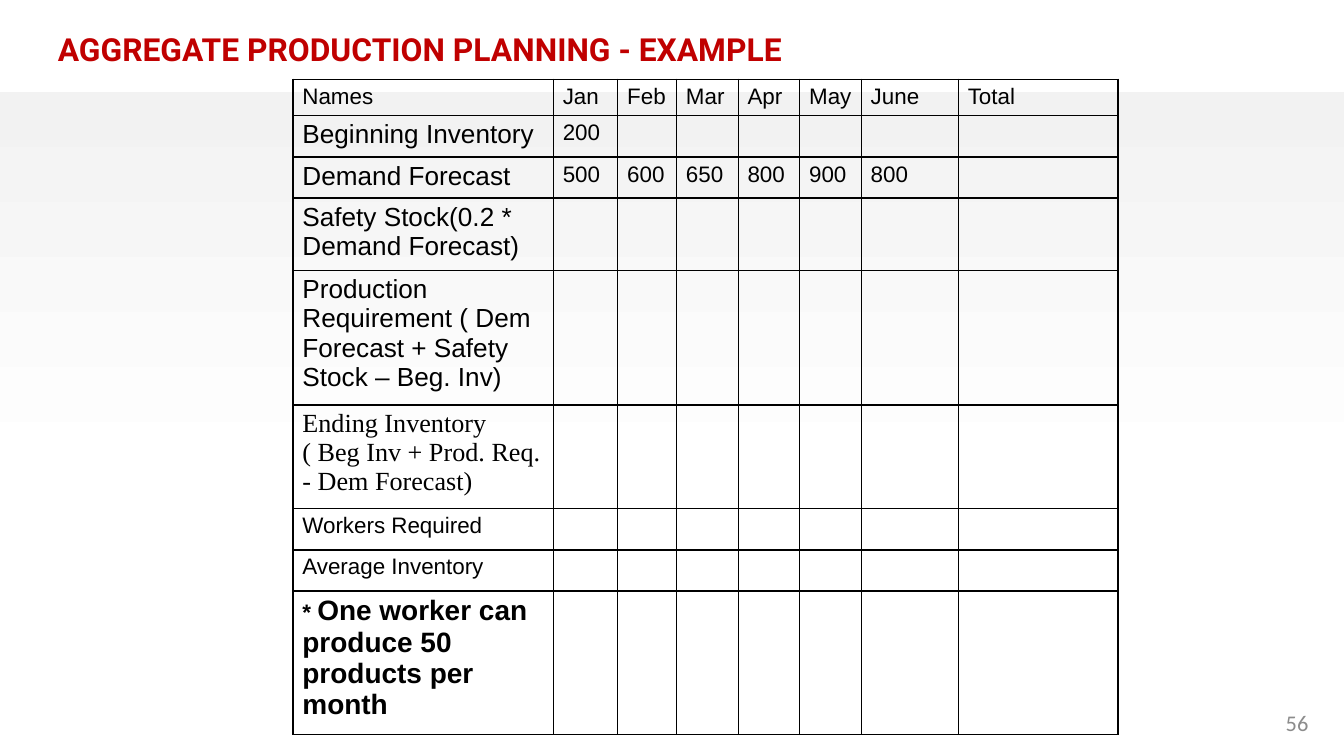
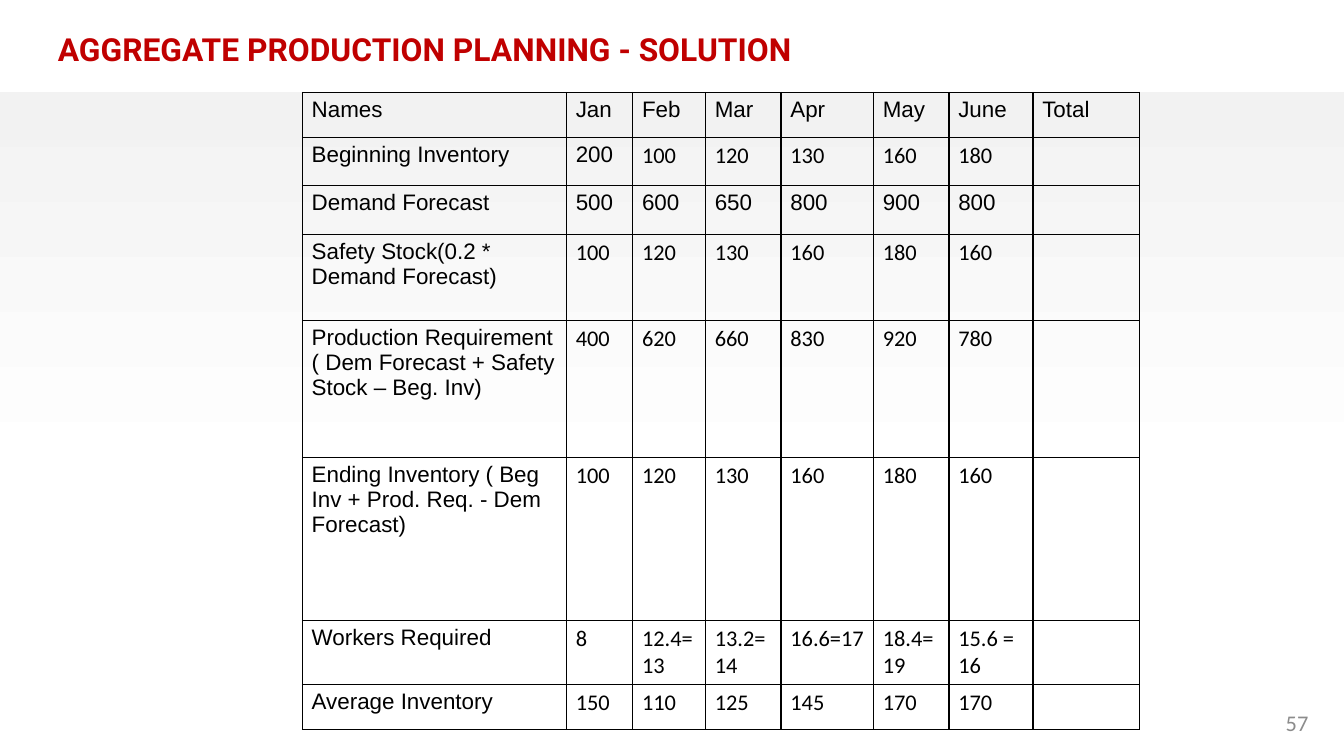
import pptx
import pptx.util
from lxml import etree
from pptx.dml.color import RGBColor
from pptx.enum.shapes import MSO_SHAPE
from pptx.enum.text import MSO_ANCHOR, MSO_AUTO_SIZE, PP_ALIGN
from pptx.oxml.ns import qn

Pt = pptx.util.Pt

COLORS = {
    "title": "C00000",
    "text": "000000",
    "number": "8C8C8C",
    "border": "000000",
    "band_top": "F2F2F2",
    "band_bottom": "FFFFFF",
}
SLIDE_SIZE = (720, 405)
BAND_BOX = (0, 49.5, 720, 355.5)
NUMBER_BOX = (540, 376.5, 168, 21.5)
TITLE_ONLY_LAYOUT = 5
CELL_MARGINS = {"margin_left": 5, "margin_right": 5, "margin_top": 2.5, "margin_bottom": 2.5}
BORDER_WIDTH = 0.75

HEADINGS = ["Names", "Jan", "Feb", "Mar", "Apr", "May", "June", "Total"]
DEMAND = ["500", "600", "650", "800", "900", "800"]
BEGINNING_LABEL = "Beginning Inventory"
DEMAND_LABEL = "Demand Forecast"
SAFETY_LABEL = "Safety Stock(0.2 * Demand Forecast)"
PRODUCTION_LABEL = "Production Requirement ( Dem Forecast + Safety Stock – Beg. Inv)"
ENDING_LABEL = "Ending Inventory ( Beg Inv + Prod. Req. - Dem Forecast)"
WORKERS_LABEL = "Workers Required"
AVERAGE_LABEL = "Average Inventory"


def rgb(name):
    return RGBColor.from_string(COLORS[name])


def in_points(values):
    return [Pt(value) for value in values]


def add_text(paragraph, text, size=12, font="Arial", color="text", bold=False):
    run = paragraph.add_run()
    run.text = text
    run.font.size = Pt(size)
    run.font.name = font
    run.font.bold = bold
    run.font.color.rgb = rgb(color)


def styled(text, **text_format):
    """A cell's content: a list of (text, format) pairs."""
    return [(text, text_format)]


def styled_row(label, values=(), **value_format):
    """A row of cells, where plain strings among the values take value_format."""
    cells = [styled(label) if isinstance(label, str) else label]
    for value in values:
        cells.append(styled(value, **value_format) if isinstance(value, str) else value)
    return cells


# Parts that every slide shares
def draw_band(slide, box):
    band = slide.shapes.add_shape(MSO_SHAPE.RECTANGLE, *in_points(box))
    band.shadow.inherit = False
    band.line.fill.background()
    band.fill.gradient()
    band.fill.gradient_angle = 270
    for stop, position, color in zip(
        band.fill.gradient_stops, (0, 0.58), ("band_top", "band_bottom")
    ):
        stop.position = position
        stop.color.rgb = rgb(color)
    # Send the band behind the title
    slide.shapes.element.insert(2, band.element)


def draw_title(slide, text, box):
    title = slide.shapes.title
    title.left, title.top, title.width, title.height = in_points(box)
    frame = title.text_frame
    frame.margin_left = frame.margin_top = frame.margin_right = frame.margin_bottom = 0
    frame.auto_size = MSO_AUTO_SIZE.NONE
    frame.word_wrap = True
    frame.vertical_anchor = MSO_ANCHOR.MIDDLE
    paragraph = frame.paragraphs[0]
    paragraph.alignment = PP_ALIGN.LEFT
    add_text(paragraph, text, size=17, font="Roboto", color="title", bold=True)


def draw_number(slide, number, box):
    frame = slide.shapes.add_textbox(*in_points(box)).text_frame
    frame.word_wrap = True
    frame.vertical_anchor = MSO_ANCHOR.MIDDLE
    paragraph = frame.paragraphs[0]
    paragraph.alignment = PP_ALIGN.RIGHT
    add_text(paragraph, str(number), font="Calibri", color="number")


# Planning table
def format_cell(cell):
    for name, margin in CELL_MARGINS.items():
        setattr(cell, name, Pt(margin))
    properties = cell._tc.get_or_add_tcPr()
    for side in ("a:lnL", "a:lnR", "a:lnT", "a:lnB"):
        line = etree.SubElement(properties, qn(side), w=str(Pt(BORDER_WIDTH)))
        fill = etree.SubElement(line, qn("a:solidFill"))
        etree.SubElement(fill, qn("a:srgbClr"), val=COLORS["border"])
    cell.fill.background()


def draw_planning_table(slide, left, top, widths, heights, rows):
    frame = slide.shapes.add_table(
        len(heights), len(widths), *in_points((left, top, sum(widths), sum(heights)))
    )
    table = frame.table
    table.first_row = table.horz_banding = False
    for column, width in zip(table.columns, widths):
        column.width = Pt(width)
    for table_row, height, contents in zip(table.rows, heights, rows):
        table_row.height = Pt(height)
        for index, cell in enumerate(table_row.cells):
            format_cell(cell)
            paragraph = cell.text_frame.paragraphs[0]
            if index < len(contents):
                for text, text_format in contents[index]:
                    add_text(paragraph, text, **text_format)
            else:
                # Keep empty cells from stretching their row
                etree.SubElement(paragraph._p, qn("a:endParaRPr"), sz="1200")


def build_planning_slide(presentation, number, title, title_box, table):
    slide = presentation.slides.add_slide(presentation.slide_layouts[TITLE_ONLY_LAYOUT])
    draw_band(slide, BAND_BOX)
    draw_number(slide, number, NUMBER_BOX)
    draw_title(slide, title, title_box)
    draw_planning_table(slide, **table)


EXAMPLE_TABLE = {
    "left": 157,
    "top": 42.5,
    "widths": [139.5, 34.5, 31.5, 33, 33, 33, 52, 85.5],
    "heights": [19.3, 22.2, 22, 37.2, 70, 53.3, 22.2, 22, 77],
    "rows": [
        styled_row(HEADINGS[0], HEADINGS[1:]),
        styled_row(styled(BEGINNING_LABEL, size=14), ["200"]),
        styled_row(styled(DEMAND_LABEL, size=14), DEMAND),
        styled_row(styled(SAFETY_LABEL, size=14)),
        styled_row(styled(PRODUCTION_LABEL, size=14)),
        styled_row(styled(ENDING_LABEL, size=14, font="Times New Roman")),
        styled_row(WORKERS_LABEL),
        styled_row(AVERAGE_LABEL),
        styled_row(
            styled("* ", bold=True)
            + styled("One worker can produce 50 products per month", size=15, bold=True)
        ),
    ],
}

SOLUTION_TABLE = {
    "left": 162,
    "top": 49.5,
    "widths": [141.5, 35.5, 39, 40.5, 49.5, 40.5, 45, 57],
    "heights": [24, 26, 26.2, 46, 73.5, 87.3, 34.3, 24],
    "rows": [
        styled_row(HEADINGS[0], HEADINGS[1:]),
        styled_row(
            BEGINNING_LABEL, [styled("200"), "100", "120", "130", "160", "180"], font="Calibri"
        ),
        styled_row(DEMAND_LABEL, DEMAND),
    ]
    + [
        styled_row(label, values, font="Calibri")
        for label, values in (
            (SAFETY_LABEL, ["100", "120", "130", "160", "180", "160"]),
            (PRODUCTION_LABEL, ["400", "620", "660", "830", "920", "780"]),
            (ENDING_LABEL, ["100", "120", "130", "160", "180", "160"]),
            (WORKERS_LABEL, ["8", "12.4=13", "13.2=14", "16.6=17", "18.4= 19", "15.6 = 16"]),
            (AVERAGE_LABEL, ["150", "110", "125", "145", "170", "170"]),
        )
    ],
}


def main():
    presentation = pptx.Presentation()
    presentation.slide_width, presentation.slide_height = in_points(SLIDE_SIZE)
    build_planning_slide(
        presentation, 56, "AGGREGATE PRODUCTION PLANNING - EXAMPLE",
        (31, 9, 594, 34), EXAMPLE_TABLE,
    )
    build_planning_slide(
        presentation, 57, "AGGREGATE PRODUCTION PLANNING - SOLUTION",
        (31, 9, 567, 34), SOLUTION_TABLE,
    )
    presentation.save("out.pptx")


if __name__ == "__main__":
    main()
